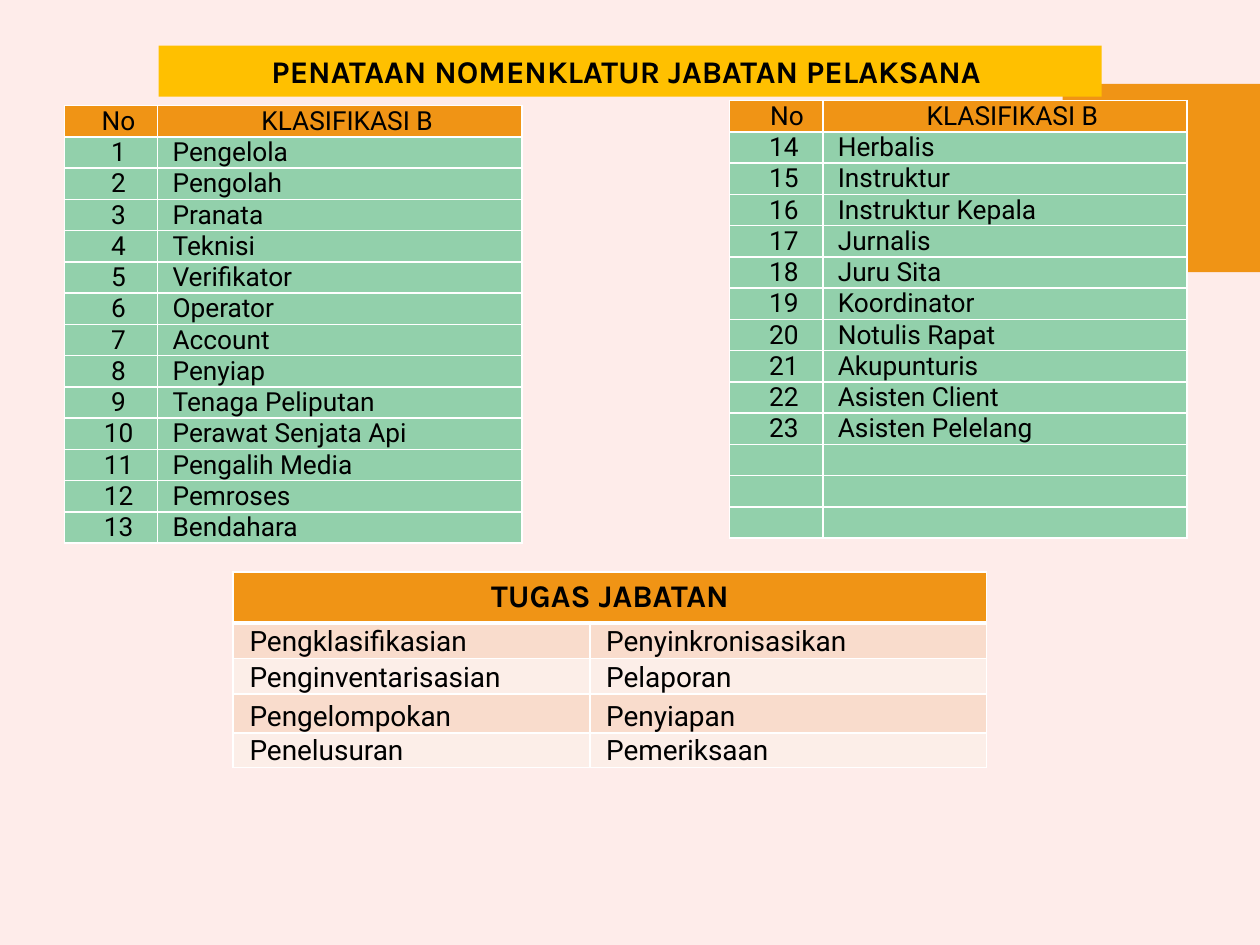
from dataclasses import dataclass

from lxml import etree
from pptx import Presentation
from pptx.dml.color import RGBColor
from pptx.enum.shapes import MSO_SHAPE
from pptx.enum.text import MSO_ANCHOR, PP_ALIGN
from pptx.oxml.ns import qn
from pptx.util import Cm, Pt

RECTANGLE = MSO_SHAPE.RECTANGLE
CENTER, LEFT = PP_ALIGN.CENTER, PP_ALIGN.LEFT
MIDDLE, BOTTOM = MSO_ANCHOR.MIDDLE, MSO_ANCHOR.BOTTOM

ORANGE, YELLOW, GREEN = "F09415", "FFC000", "92D0AB"
PINK, PEACH, CREAM = "FEECEA", "F9DCCC", "FCEEE8"
BLACK, WHITE = "000000", "FFFFFF"
CLASS_COLUMNS = (1.88, 7.34)
CLASS_ROWS = 13
ROW_HEIGHT = 0.63
INDENT = 0.3


@dataclass(frozen=True)
class TextStyle:
    font: str
    size: float
    bold: bool = False
    align: PP_ALIGN = LEFT
    indent: float = 0


@dataclass(frozen=True)
class ClassList:
    left: float
    top: float
    first_number: int
    names: tuple[str, ...]
    number_indent: float = INDENT


HEADING = TextStyle("Karla", 18, True, CENTER)
ENTRY = TextStyle("Roboto", 15, indent=INDENT)
ENTRY_CENTERED = TextStyle("Roboto", 15, align=CENTER, indent=INDENT)
TASK = TextStyle("Roboto", 16, indent=INDENT)

CLASS_LISTS = (
    ClassList(1.3, 2.13, 1, (
        "Pengelola", "Pengolah", "Pranata", "Teknisi", "Verifikator",
        "Operator", "Account", "Penyiap", "Tenaga Peliputan",
        "Perawat Senjata Api", "Pengalih Media", "Pemroses", "Bendahara")),
    ClassList(14.71, 2.03, 14, (
        "Herbalis", "Instruktur", "Instruktur Kepala", "Jurnalis",
        "Juru Sita", "Koordinator", "Notulis Rapat", "Akupunturis",
        "Asisten Client", "Asisten Pelelang"), 0.43),
)
TASKS = (
    ("Pengklasifikasian", "Penyinkronisasikan"),
    ("Penginventarisasian", "Pelaporan"),
    ("Pengelompokan", "Penyiapan"),
    ("Penelusuran", "Pemeriksaan"),
)
TASK_COLUMNS = (7.19, 8.0)
TASK_HEIGHTS = (1.03, 0.71, 0.72, 0.79, 0.69)


def color(code: str) -> RGBColor:
    return RGBColor.from_string(code)


def write(frame, text: str, style: TextStyle) -> None:
    para = frame.paragraphs[0]
    para.alignment = style.align
    para._p.get_or_add_pPr().set("marL", str(Cm(style.indent)))
    if text:
        para.add_run().text = text
    else:
        etree.SubElement(para._p, qn("a:endParaRPr"), sz=str(style.size * 100))
    para.font.name = style.font
    para.font.size = Pt(style.size)
    para.font.bold = style.bold
    para.font.color.rgb = color(BLACK)


def add_block(page, left: float, top: float, width: float, height: float,
              fill: str):
    box = page.shapes.add_shape(RECTANGLE, Cm(left), Cm(top), Cm(width), Cm(height))
    box.shadow.inherit = False
    box.fill.solid()
    box.fill.fore_color.rgb = color(fill)
    box.line.fill.background()
    return box


def add_grid(page, left: float, top: float, columns: tuple[float, ...],
             heights: tuple[float, ...]):
    frame = page.shapes.add_table(len(heights), len(columns), Cm(left), Cm(top),
                                  Cm(sum(columns)), Cm(sum(heights)))
    table = frame.table
    table.first_row = table.horz_banding = False
    for column, width in zip(table.columns, columns):
        column.width = Cm(width)
    for row, height in zip(table.rows, heights):
        row.height = Cm(height)
    return table


def format_cell(cell, fill: str, top: float = 1, bottom: float = 1) -> None:
    properties = cell._tc.get_or_add_tcPr()
    for side, width in (("L", 1), ("R", 1), ("T", top), ("B", bottom)):
        border = etree.SubElement(properties, qn(f"a:ln{side}"), w=str(Pt(width)))
        solid = etree.SubElement(border, qn("a:solidFill"))
        etree.SubElement(solid, qn("a:srgbClr"), val=WHITE)
    cell.fill.solid()
    cell.fill.fore_color.rgb = color(fill)


def fill_entry(cell, text: str, style: TextStyle, margin: float = 0) -> None:
    cell.margin_left = cell.margin_right = cell.margin_top = Cm(margin)
    cell.margin_bottom = 0
    cell.vertical_anchor = BOTTOM
    write(cell.text_frame, text, style)


def add_class_table(page, classes: ClassList) -> None:
    table = add_grid(page, classes.left, classes.top, CLASS_COLUMNS,
                     (ROW_HEIGHT,) * (CLASS_ROWS + 1))
    number_heading = TextStyle("Roboto", 15, align=CENTER,
                               indent=classes.number_indent)
    rows = [("No", "KLASIFIKASI B")]
    rows += [(str(number), name)
             for number, name in enumerate(classes.names, classes.first_number)]
    rows += [("", "")] * (CLASS_ROWS + 1 - len(rows))
    for index, texts in enumerate(rows):
        styles = (ENTRY_CENTERED, ENTRY) if index else (number_heading, ENTRY_CENTERED)
        for column, (text, style) in enumerate(zip(texts, styles)):
            cell = table.cell(index, column)
            format_cell(cell, GREEN if index else ORANGE)
            fill_entry(cell, text, style)


def add_task_table(page) -> None:
    table = add_grid(page, 4.7, 11.53, TASK_COLUMNS, TASK_HEIGHTS)
    for column in range(len(TASK_COLUMNS)):
        format_cell(table.cell(0, column), ORANGE, bottom=3)
    title = table.cell(0, 0)
    title.merge(table.cell(0, 1))
    write(title.text_frame, "TUGAS JABATAN", HEADING)
    for index, texts in enumerate(TASKS, 1):
        for column, text in enumerate(texts):
            cell = table.cell(index, column)
            format_cell(cell, PEACH if index % 2 else CREAM,
                        top=3 if index == 1 else 1)
            fill_entry(cell, text, TASK, 0.03)


def main() -> None:
    deck = Presentation()
    deck.slide_width, deck.slide_height = Cm(25.4), Cm(19.05)
    page = deck.slides.add_slide(deck.slide_layouts[6])
    page.background.fill.solid()
    page.background.fill.fore_color.rgb = color(PINK)

    add_block(page, 21.42, 1.69, 3.98, 3.8, ORANGE)
    for classes in CLASS_LISTS:
        add_class_table(page, classes)
    banner = add_block(page, 3.2, 0.92, 19.01, 1.03, YELLOW)
    banner.text_frame.vertical_anchor = MIDDLE
    write(banner.text_frame, "PENATAAN NOMENKLATUR JABATAN PELAKSANA ", HEADING)
    add_task_table(page)
    deck.save("out.pptx")


if __name__ == "__main__":
    main()
